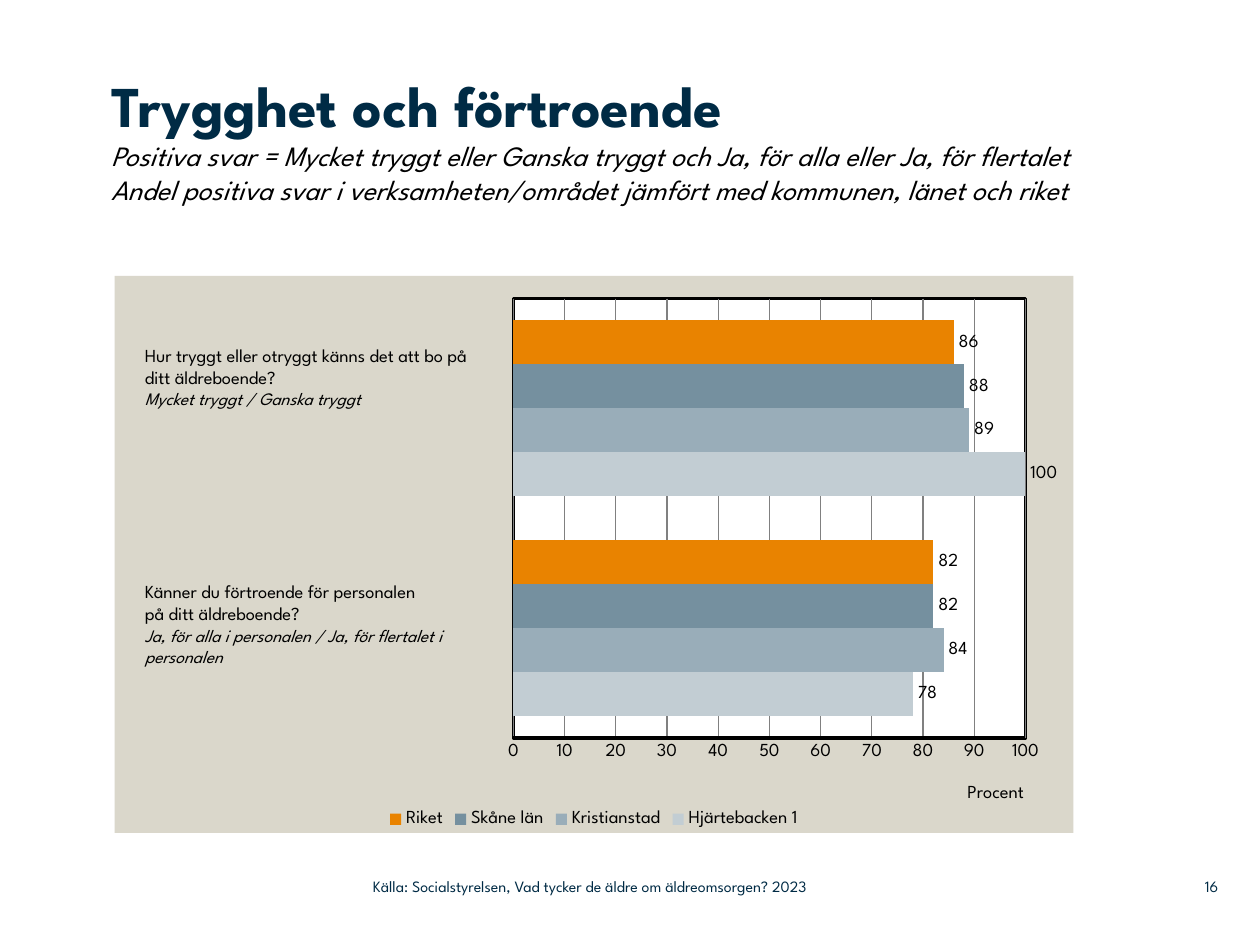
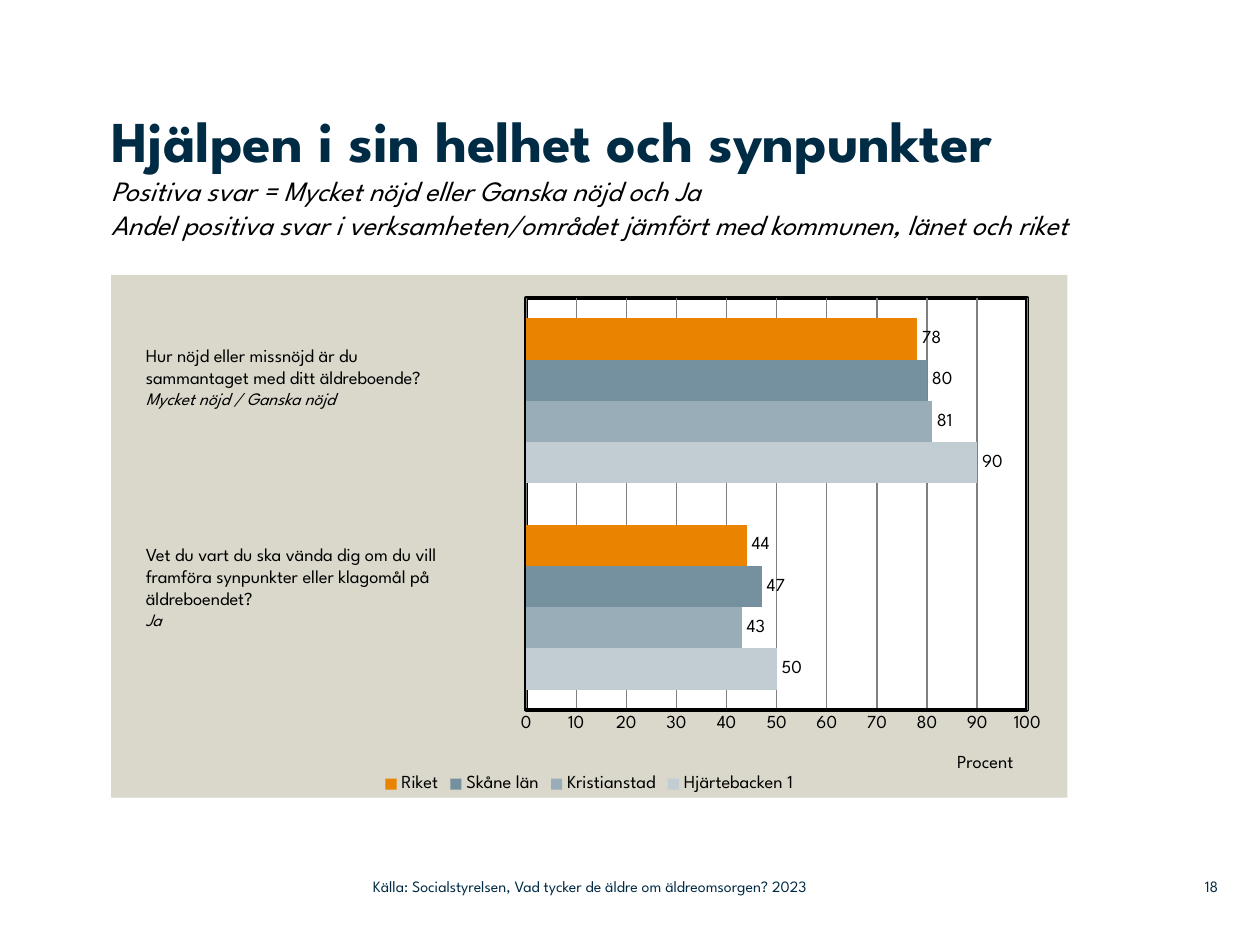
from dataclasses import dataclass

from pptx import Presentation
from pptx.chart.data import CategoryChartData
from pptx.dml.color import RGBColor
from pptx.enum.chart import XL_CHART_TYPE, XL_LABEL_POSITION, XL_LEGEND_POSITION, XL_TICK_MARK
from pptx.enum.text import MSO_ANCHOR, MSO_AUTO_SIZE, PP_ALIGN
from pptx.oxml import parse_xml
from pptx.oxml.ns import nsdecls, qn
from pptx.util import Cm, Pt

BAR_CLUSTERED = XL_CHART_TYPE.BAR_CLUSTERED
OUTSIDE_END = XL_LABEL_POSITION.OUTSIDE_END
LEGEND_BOTTOM = XL_LEGEND_POSITION.BOTTOM
NO_TICKS = XL_TICK_MARK.NONE
TOP, MIDDLE = MSO_ANCHOR.TOP, MSO_ANCHOR.MIDDLE
NO_AUTOFIT = MSO_AUTO_SIZE.NONE
LEFT, RIGHT = PP_ALIGN.LEFT, PP_ALIGN.RIGHT


@dataclass(frozen=True)
class Theme:
    font: str = "League Spartan"
    navy: str = "002B45"
    black: str = "000000"
    grid: str = "808080"
    panel: str = "DAD7CB"
    plot: str = "FFFFFF"
    title: float = 33
    subtitle: float = 16
    body: float = 10.5
    answer: float = 10
    footer: float = 9


THEME = Theme()
SERIES_COLORS = {
    "Hjärtebacken 1": "C2CDD3",
    "Kristianstad": "99ADB9",
    "Skåne län": "75909F",
    "Riket": "E98300",
}
SOURCE = "Källa: Socialstyrelsen, Vad tycker de äldre om äldreomsorgen? 2023"

# Boxes are left, top, width, height in cm; layouts are shares of the chart.
SLIDES = [
    {
        "number": "16",
        "title": "Trygghet och förtroende",
        "subtitle": [
            "Positiva svar = Mycket tryggt eller Ganska tryggt och Ja, för alla eller Ja, för flertalet",
            "Andel positiva svar i verksamheten/området jämfört med kommunen, länet och riket",
        ],
        "title_box": (2.24, 1.4, 19.69, 4.17),
        "chart_box": (2.31, 5.56, 19.33, 11.23),
        "plot_layout": {"x": 0.416, "y": 0.041, "w": 0.534, "h": 0.789},
        "unit_layout": {"x": 0.886, "y": 0.905},
        "values": [(78, 100), (84, 89), (82, 88), (82, 86)],
        "questions": [
            ((2.67, 6.81, 7.57, 2.06),
             ["Hur tryggt eller otryggt känns det att bo på ditt äldreboende?"],
             "Mycket tryggt / Ganska tryggt"),
            ((2.67, 11.58, 7.62, 2.49),
             ["Känner du förtroende för personalen", "på ditt äldreboende?"],
             "Ja, för alla i personalen / Ja, för flertalet i personalen"),
        ],
    },
    {
        "number": "18",
        "title": "Hjälpen i sin helhet och synpunkter",
        "subtitle": [
            "Positiva svar = Mycket nöjd eller Ganska nöjd och Ja",
            "Andel positiva svar i verksamheten/området jämfört med kommunen, länet och riket",
        ],
        "title_box": (2.24, 2.11, 19.79, 3.4),
        "chart_box": (2.24, 5.54, 19.28, 10.54),
        "plot_layout": {"x": 0.434, "y": 0.044, "w": 0.524, "h": 0.789},
        "unit_layout": {"x": 0.881, "y": 0.909},
        "values": [(50, 90), (43, 81), (47, 80), (44, 78)],
        "questions": [
            ((2.69, 6.81, 7.87, 2.06),
             ["Hur nöjd eller missnöjd är du", "sammantaget med ditt äldreboende?"],
             "Mycket nöjd / Ganska nöjd"),
            ((2.69, 10.82, 7.75, 2.06),
             ["Vet du vart du ska vända dig om du vill framföra synpunkter "
              "eller klagomål på äldreboendet?"],
             "Ja"),
        ],
    },
]


def add_run(paragraph, text, size, color, bold=False, italic=False):
    run = paragraph.add_run()
    run.text = text
    font = run.font
    font.name, font.size, font.bold, font.italic = THEME.font, Pt(size), bold, italic
    font.color.rgb = RGBColor.from_string(color)


def set_layout(chart_part, index, layout, target=""):
    """Pin a plot area or axis title; index is where its layout element belongs."""
    for old_layout in chart_part.findall(qn("c:layout")):
        chart_part.remove(old_layout)
    modes = "".join(f'<c:{key}Mode val="edge"/>' for key in "xy")
    shares = "".join(f'<c:{key} val="{share}"/>' for key, share in layout.items())
    chart_part.insert(index, parse_xml(
        f'<c:layout {nsdecls("c")}><c:manualLayout>{target}{modes}{shares}'
        "</c:manualLayout></c:layout>"))


prs = Presentation()
prs.slide_width, prs.slide_height = Cm(25.4), Cm(19.05)

for content in SLIDES:
    slide = prs.slides.add_slide(prs.slide_layouts[5])

    # Title with its italic explanation
    title = slide.shapes.title
    title.left, title.top, title.width, title.height = map(Cm, content["title_box"])
    frame = title.text_frame
    frame.auto_size, frame.vertical_anchor, frame.word_wrap = NO_AUTOFIT, TOP, True
    frame.margin_left = frame.margin_top = frame.margin_right = frame.margin_bottom = 0
    heading = frame.paragraphs[0]
    heading.alignment = LEFT
    add_run(heading, content["title"], THEME.title, THEME.navy, bold=True)
    for line in content["subtitle"]:
        heading.add_line_break()
        add_run(heading, line, THEME.subtitle, THEME.black, italic=True)

    # Chart data and bars
    chart_data = CategoryChartData()
    chart_data.categories = ["1", "2"]
    for name, values in zip(SERIES_COLORS, content["values"]):
        chart_data.add_series(name, values)
    chart = slide.shapes.add_chart(
        BAR_CLUSTERED, *map(Cm, content["chart_box"]), chart_data).chart
    chart.has_title = False
    chart.font.name, chart.font.size = THEME.font, Pt(THEME.body)
    chart.font.color.rgb = RGBColor.from_string(THEME.black)
    bars = chart.plots[0]
    bars.gap_width, bars.overlap, bars.vary_by_categories = 100, 0, False
    for series in bars.series:
        series.format.fill.solid()
        series.format.fill.fore_color.rgb = RGBColor.from_string(SERIES_COLORS[series.name])
        labels = series.data_labels
        labels.show_value, labels.position = True, OUTSIDE_END

    # Axes and legend
    chart.category_axis.visible = False
    percent_axis = chart.value_axis
    percent_axis.minimum_scale, percent_axis.maximum_scale = 0, 100
    percent_axis.major_unit = 10
    percent_axis.major_tick_mark = percent_axis.minor_tick_mark = NO_TICKS
    percent_axis.has_major_gridlines = True
    for line, color, width in [
        (percent_axis.format.line, THEME.black, 2),
        (percent_axis.major_gridlines.format.line, THEME.grid, 0.75),
    ]:
        line.color.rgb, line.width = RGBColor.from_string(color), Pt(width)
    unit = percent_axis.axis_title
    add_run(unit.text_frame.paragraphs[0], "Procent", THEME.body, THEME.black)
    chart.has_legend = True
    chart.legend.position, chart.legend.include_in_layout = LEGEND_BOTTOM, False
    chart.legend.font.name, chart.legend.font.size = THEME.font, Pt(THEME.body)

    # Panel, plot background and fixed positions
    chart_xml = chart._chartSpace.find(qn("c:chart"))
    plot_area = chart_xml.find(qn("c:plotArea"))
    set_layout(plot_area, 0, content["plot_layout"], '<c:layoutTarget val="inner"/>')
    set_layout(plot_area.find(qn("c:valAx")).find(qn("c:title")), 1, content["unit_layout"])
    panel_format, plot_format = [
        parse_xml(
            f'<c:spPr {nsdecls("c", "a")}><a:solidFill><a:srgbClr val="{fill}"/></a:solidFill>'
            f"{border}</c:spPr>")
        for fill, border in [
            (THEME.panel, "<a:ln><a:noFill/></a:ln>"),
            (THEME.plot, f'<a:ln w="{Pt(2)}"><a:solidFill><a:srgbClr val="{THEME.black}"/>'
                         "</a:solidFill></a:ln>"),
        ]
    ]
    chart_xml.addnext(panel_format)
    plot_area.append(plot_format)

    # Questions beside the bars
    for box, question, answers in content["questions"]:
        frame = slide.shapes.add_textbox(*map(Cm, box)).text_frame
        frame.word_wrap = True
        paragraph = frame.paragraphs[0]
        for line in question:
            add_run(paragraph, line, THEME.body, THEME.black)
            paragraph = frame.add_paragraph()
        add_run(paragraph, answers, THEME.answer, THEME.black, italic=True)

    # Footer
    for text, left, width, alignment in [
        (content["number"], 23.37, 1.19, RIGHT),
        (SOURCE, 7.52, 11.25, LEFT),
    ]:
        frame = slide.shapes.add_textbox(Cm(left), Cm(17.5), Cm(width), Cm(0.74)).text_frame
        frame.word_wrap, frame.vertical_anchor = True, MIDDLE
        frame.margin_left = frame.margin_top = frame.margin_right = frame.margin_bottom = 0
        frame.paragraphs[0].alignment = alignment
        add_run(frame.paragraphs[0], text, THEME.footer, THEME.navy)

prs.save("out.pptx")
